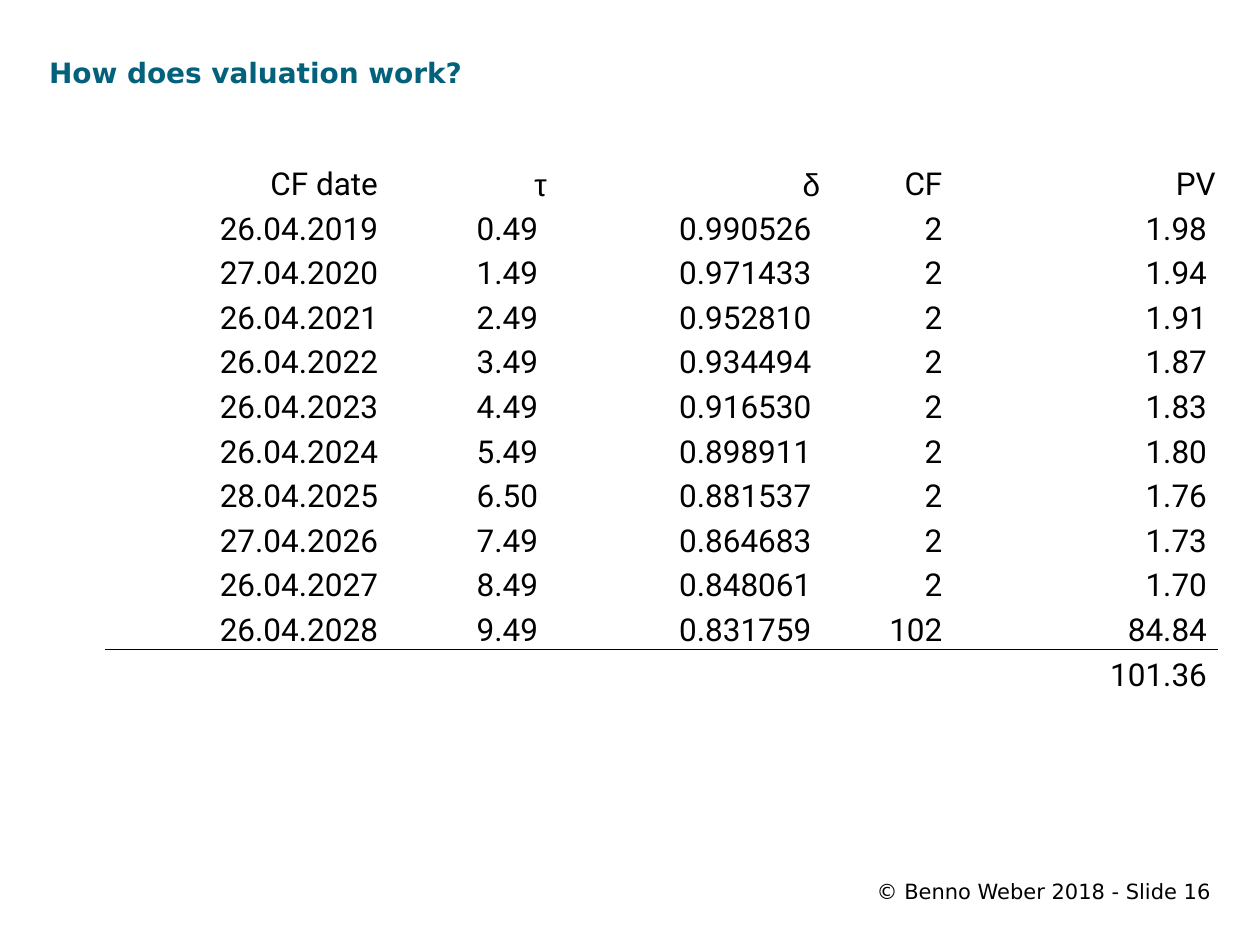
from lxml import etree
from pptx import Presentation
from pptx.dml.color import RGBColor
from pptx.enum.text import MSO_ANCHOR, PP_ALIGN
from pptx.oxml import parse_xml
from pptx.oxml.ns import nsdecls
from pptx.util import Inches, Pt

TEAL = RGBColor(0x04, 0x61, 0x7B)
BLACK = RGBColor(0x00, 0x00, 0x00)

HEADERS = ["CF date", "τ", "δ", "CF", "PV"]
CASH_FLOWS = [
    ("26.04.2019", "0.49", "0.990526", "2", "1.98"),
    ("27.04.2020", "1.49", "0.971433", "2", "1.94"),
    ("26.04.2021", "2.49", "0.952810", "2", "1.91"),
    ("26.04.2022", "3.49", "0.934494", "2", "1.87"),
    ("26.04.2023", "4.49", "0.916530", "2", "1.83"),
    ("26.04.2024", "5.49", "0.898911", "2", "1.80"),
    ("28.04.2025", "6.50", "0.881537", "2", "1.76"),
    ("27.04.2026", "7.49", "0.864683", "2", "1.73"),
    ("26.04.2027", "8.49", "0.848061", "2", "1.70"),
    ("26.04.2028", "9.49", "0.831759", "102", "84.84"),
]
TOTAL = ("", "", "", "", "101.36")
COLUMN_WIDTHS = [2.17, 1.34, 2.17, 0.97, 2.17]
DECIMAL_COLUMNS = {1, 2, 4}


def add_run(paragraph, text, size, font, color, bold=False):
    run = paragraph.add_run()
    run.text = text
    run.font.size = Pt(size)
    run.font.name = font
    run.font.bold = bold
    run.font.color.rgb = color


def add_label(slide, box, text, size, color, bold=False, alignment=PP_ALIGN.LEFT):
    shape = slide.shapes.add_textbox(*map(Inches, box))
    frame = shape.text_frame
    frame.word_wrap = True
    frame.vertical_anchor = MSO_ANCHOR.TOP
    frame.margin_left = frame.margin_right = Inches(0.08)
    frame.margin_top = frame.margin_bottom = Inches(0.08)
    paragraph = frame.paragraphs[0]
    paragraph.alignment = alignment
    add_run(paragraph, text, size, "DejaVu Sans", color, bold)


def add_border(cell, side):
    """Draw a thin rule on one side of the cell: 'T' or 'B'."""
    line = parse_xml(f'<a:ln{side} {nsdecls("a")} w="{Pt(0.5)}"/>')
    fill = etree.SubElement(line, line.tag.replace(f"ln{side}", "solidFill"))
    color = etree.SubElement(fill, line.tag.replace(f"ln{side}", "srgbClr"))
    color.set("val", str(BLACK))
    cell._tc.get_or_add_tcPr().insert(0, line)


def fill_cell(cell, text, font, right_margin):
    cell.fill.background()
    cell.vertical_anchor = MSO_ANCHOR.BOTTOM
    cell.margin_left = cell.margin_top = Inches(0.01)
    cell.margin_right = Inches(right_margin)
    cell.margin_bottom = 0
    if text:
        paragraph = cell.text_frame.paragraphs[0]
        paragraph.alignment = PP_ALIGN.RIGHT
        add_run(paragraph, text, 18, font, BLACK)


def add_valuation_table(slide, box):
    rows = [HEADERS, *CASH_FLOWS, TOTAL]
    frame = slide.shapes.add_table(len(rows), len(HEADERS), *map(Inches, box))
    table = frame.table
    table.first_row = table.horz_banding = False
    for column, width in zip(table.columns, COLUMN_WIDTHS):
        column.width = Inches(width)
    for row in table.rows:
        row.height = Inches(box[3] / len(rows))
    last = len(rows) - 1
    for row_index, values in enumerate(rows):
        for column_index, text in enumerate(values):
            cell = table.cell(row_index, column_index)
            font = "Arial" if text in ("τ", "δ") else "Roboto"
            indented = row_index > 0 and column_index in DECIMAL_COLUMNS
            fill_cell(cell, text, font, 0.08 if indented else 0.01)
            if row_index == last - 1:
                add_border(cell, "B")
            elif row_index == last:
                add_border(cell, "T")


def main():
    presentation = Presentation()
    presentation.slide_width = Inches(10)
    presentation.slide_height = Inches(7.5)
    slide = presentation.slides.add_slide(presentation.slide_layouts[6])
    add_label(slide, (5.45, 6.89, 4.24, 0.36), "© Benno Weber 2018 - Slide 16",
              12, BLACK, alignment=PP_ALIGN.RIGHT)
    add_label(slide, (0.31, 0.36, 8.3, 0.9), "How does valuation work?",
              16, TEAL, bold=True)
    add_valuation_table(slide, (0.84, 1.26, 8.82, 4.25))
    presentation.save("out.pptx")


if __name__ == "__main__":
    main()
